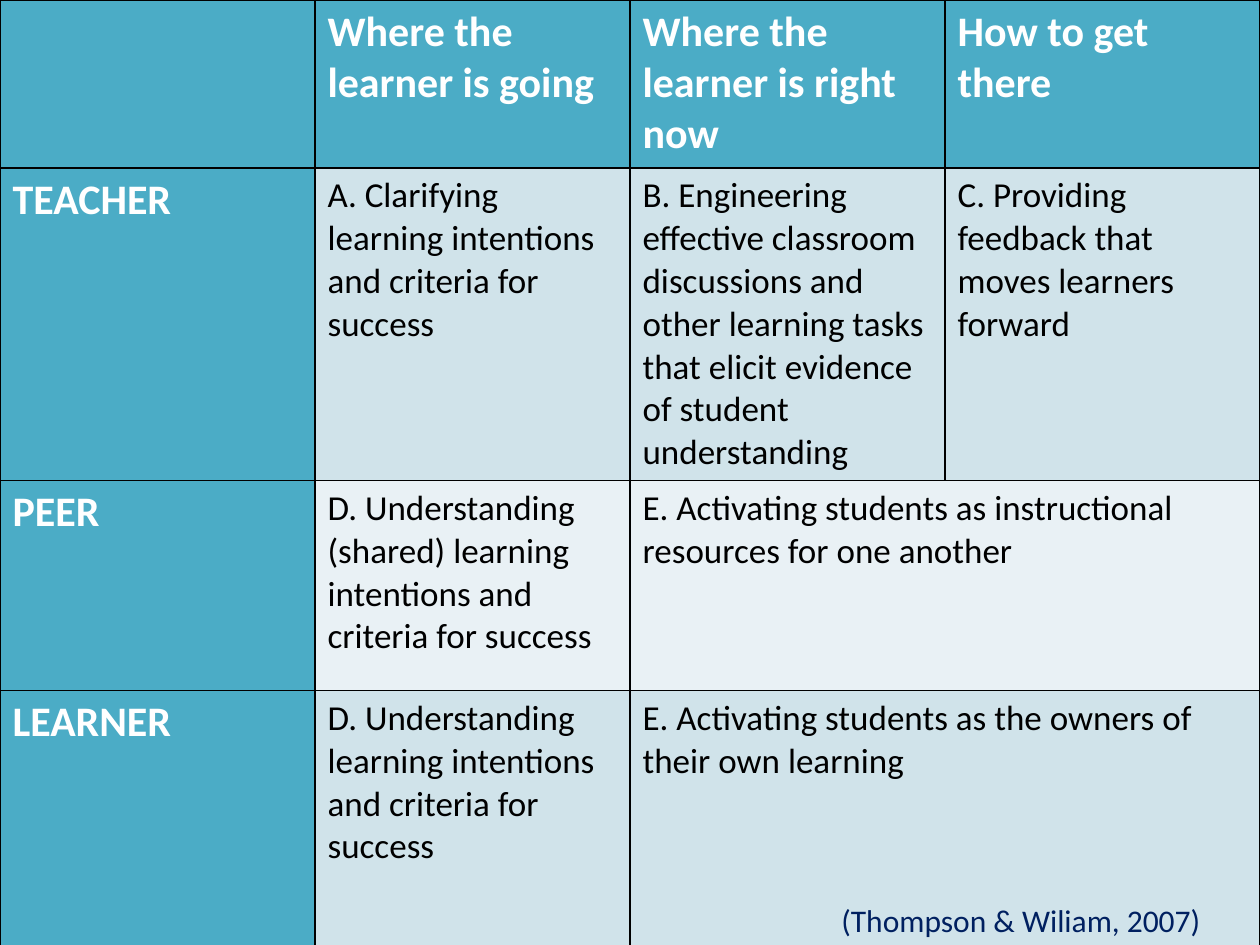
from dataclasses import dataclass

from lxml import etree
from pptx import Presentation
from pptx.dml.color import RGBColor
from pptx.oxml.ns import qn
from pptx.util import Emu, Pt

PX = 914400 / 126
BLANK_LAYOUT = 6
BORDER_SIDES = ("a:lnL", "a:lnR", "a:lnT", "a:lnB")


@dataclass(frozen=True)
class Theme:
    font: str = "Calibri"
    background: str = "F4F1BB"
    heading_fill: str = "4BACC6"
    odd_row_fill: str = "D0E3EA"
    even_row_fill: str = "E9F1F5"
    heading_text: str = "FFFFFF"
    body_text: str = "000000"
    citation_text: str = "002060"
    border: str = "000000"
    border_width: int = 1
    heading_size: int = 24
    body_size: int = 20
    citation_size: int = 18


class SlideBuilder:
    def __init__(self, slide, theme):
        self.slide = slide
        self.theme = theme
        fill = slide.background.fill
        fill.solid()
        fill.fore_color.rgb = RGBColor.from_string(theme.background)

    def px(self, *lengths):
        return [Emu(round(length * PX)) for length in lengths]

    def set_text(self, frame, text, size, color, bold=False):
        frame.text = text
        font = frame.paragraphs[0].font
        font.name = self.theme.font
        font.size = Pt(size)
        font.bold = bold
        font.color.rgb = RGBColor.from_string(color)

    def border(self, cell):
        properties = cell._tc.get_or_add_tcPr()
        for side in BORDER_SIDES:
            line = etree.SubElement(properties, qn(side), w=str(Pt(self.theme.border_width)))
            solid = etree.SubElement(line, qn("a:solidFill"))
            etree.SubElement(solid, qn("a:srgbClr"), val=self.theme.border)

    def cell(self, cell, text, row, column):
        theme = self.theme
        heading = row == 0 or column == 0
        row_fill = theme.odd_row_fill if row % 2 else theme.even_row_fill
        self.border(cell)
        cell.fill.solid()
        cell.fill.fore_color.rgb = RGBColor.from_string(theme.heading_fill if heading else row_fill)
        size = theme.heading_size if heading else theme.body_size
        color = theme.heading_text if heading else theme.body_text
        self.set_text(cell.text_frame, text, size, color, heading)

    def table(self, box, rows, row_heights, merges):
        columns = len(rows[0])
        table = self.slide.shapes.add_table(len(rows), columns, *self.px(*box)).table
        for row, height in zip(table.rows, self.px(*row_heights)):
            row.height = height
        for column in table.columns:
            column.width = self.px(box[2] / columns)[0]
        for r, texts in enumerate(rows):
            for c, text in enumerate(texts):
                self.cell(table.cell(r, c), text, r, c)
        for first, last in merges:
            table.cell(*first).merge(table.cell(*last))

    def citation(self, box, text):
        frame = self.slide.shapes.add_textbox(*self.px(*box)).text_frame
        frame.word_wrap = True
        self.set_text(frame, text, self.theme.citation_size, self.theme.citation_text)


STRATEGIES = [
    ["", "Where the learner is going", "Where the learner is right now", "How to get there"],
    [
        "TEACHER",
        "A. Clarifying learning intentions and criteria for success",
        "B. Engineering effective classroom discussions and other learning tasks "
        "that elicit evidence of student understanding",
        "C. Providing feedback that moves learners forward",
    ],
    [
        "PEER",
        "D. Understanding (shared) learning intentions and criteria for success",
        "E. Activating students as instructional resources for one another",
        "",
    ],
    [
        "LEARNER",
        "D. Understanding learning intentions and criteria for success",
        "E. Activating students as the owners of their own learning",
        "",
    ],
]


def main():
    presentation = Presentation()
    presentation.slide_width, presentation.slide_height = Emu(round(1260 * PX)), Emu(round(945 * PX))
    slide = presentation.slides.add_slide(presentation.slide_layouts[BLANK_LAYOUT])
    builder = SlideBuilder(slide, Theme())
    row_heights = [168, 304, 210, 271]
    merges = [((row, 2), (row, 3)) for row in (2, 3)]
    builder.table((0, 0, 1260, sum(row_heights)), STRATEGIES, row_heights, merges)
    builder.citation((829, 895, 431, 50), "(Thompson & Wiliam, 2007)")
    presentation.save("out.pptx")


if __name__ == "__main__":
    main()
